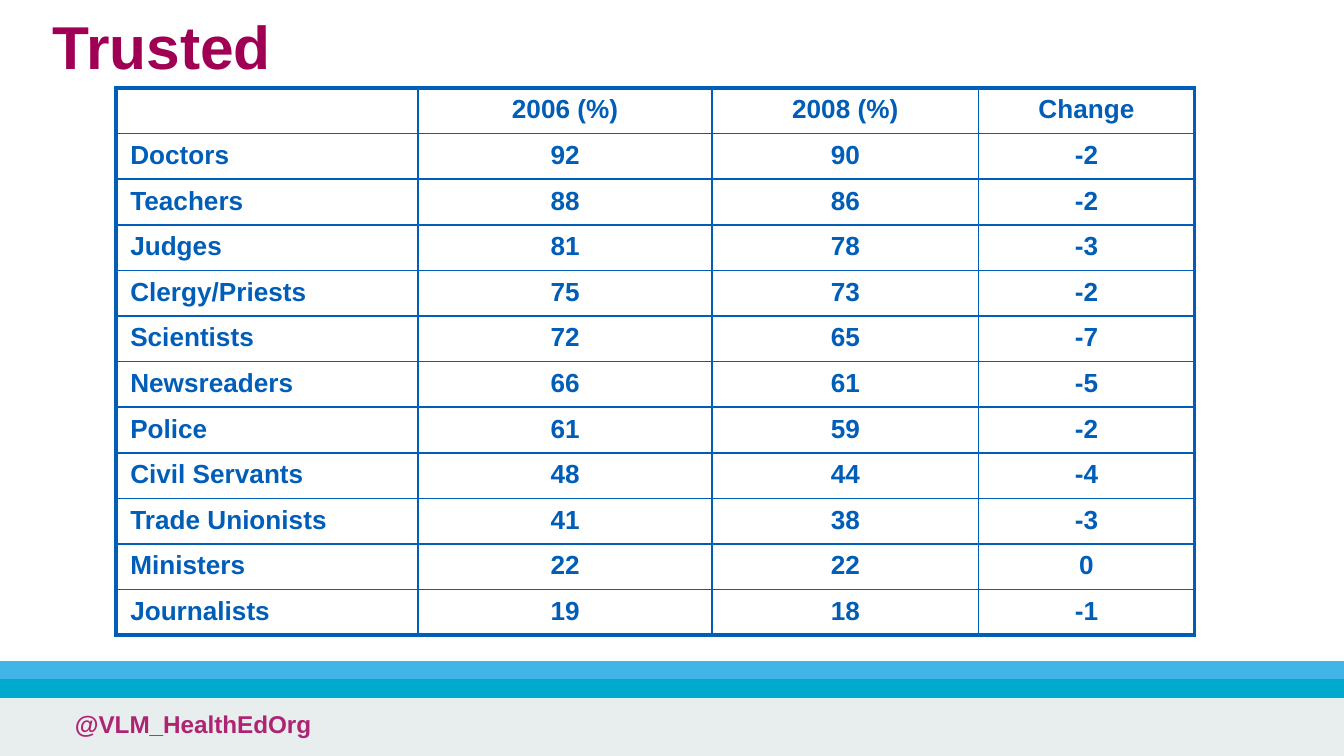
from lxml.etree import SubElement
from pptx import Presentation
from pptx.dml.color import RGBColor
from pptx.enum.shapes import MSO_SHAPE as Shape
from pptx.enum.text import MSO_ANCHOR as Anchor, PP_ALIGN as Align
from pptx.oxml.ns import qn
from pptx.util import Pt

HEADING = "Trusted"
HANDLE = "@VLM_HealthEdOrg"
HEADER = ("", "2006 (%)", "2008 (%)", "Change")
PROFESSIONS = [
    ("Doctors", "92", "90", "-2"),
    ("Teachers", "88", "86", "-2"),
    ("Judges", "81", "78", "-3"),
    ("Clergy/Priests", "75", "73", "-2"),
    ("Scientists", "72", "65", "-7"),
    ("Newsreaders", "66", "61", "-5"),
    ("Police", "61", "59", "-2"),
    ("Civil Servants", "48", "44", "-4"),
    ("Trade Unionists", "41", "38", "-3"),
    ("Ministers", "22", "22", "0"),
    ("Journalists", "19", "18", "-1"),
]
FOOTER_BANDS = [
    (374.4, 30.6, "E8EDEE"),
    (354.2, 10.1, "41B6E6"),
    (363.9, 10.1, "00A9CE"),
]
WIDTH, HEIGHT = 720, 405
COLUMN_WIDTHS = (161.8, 157.7, 142.6, 115.8)
ROW_HEIGHT = 23.84
BLUE = "005EB8"
THIN, THICK = 1, 2.25


def color(value):
    """Turn a hex string into a colour."""
    return RGBColor.from_string(value)


def style(paragraph, text, size, ink):
    """Write bold Arial text into a paragraph."""
    paragraph.text = text
    font = paragraph.font
    font.name, font.size, font.bold = "Arial", Pt(size), True
    font.color.rgb = color(ink)


def add_text(slide, text, box, size, ink):
    """Add a wrapping one-line text box and return its frame."""
    frame = slide.shapes.add_textbox(*map(Pt, box)).text_frame
    frame.word_wrap = True
    style(frame.paragraphs[0], text, size, ink)
    return frame


def add_border(cell, side, width):
    """Draw one blue side of a table cell."""
    line = SubElement(cell._tc.get_or_add_tcPr(), qn(f"a:ln{side}"), w=str(Pt(width)))
    fill = SubElement(line, qn("a:solidFill"))
    SubElement(fill, qn("a:srgbClr"), val=BLUE)


def add_trust_table(slide):
    """Add the trust table with a thick frame and thin inner rules."""
    rows = [HEADER, *PROFESSIONS]
    last_row, last_column = len(rows) - 1, len(HEADER) - 1
    table = slide.shapes.add_table(
        len(rows), len(HEADER), Pt(62.1), Pt(47.1),
        Pt(sum(COLUMN_WIDTHS)), Pt(ROW_HEIGHT * len(rows)),
    ).table
    table.first_row = table.horz_banding = False
    for column, width in zip(table.columns, COLUMN_WIDTHS):
        column.width = Pt(width)
    for r, row in enumerate(rows):
        table.rows[r].height = Pt(ROW_HEIGHT)
        for c, text in enumerate(row):
            cell = table.cell(r, c)
            cell.margin_left = cell.margin_right = Pt(7.7)
            cell.margin_top = cell.margin_bottom = Pt(3.8)
            paragraph = cell.text_frame.paragraphs[0]
            style(paragraph, text, 14, BLUE)
            paragraph.alignment = Align.CENTER if c else Align.LEFT
            outer = {"L": c == 0, "R": c == last_column, "T": r == 0, "B": r == last_row}
            for side, is_outer in outer.items():
                add_border(cell, side, THICK if is_outer else THIN)
            cell.fill.background()


def main():
    """Build the slide and save it."""
    deck = Presentation()
    deck.slide_width, deck.slide_height = Pt(WIDTH), Pt(HEIGHT)
    slide = deck.slides.add_slide(deck.slide_layouts[6])

    for top, height, fill in FOOTER_BANDS:
        band = slide.shapes.add_shape(Shape.RECTANGLE, 0, Pt(top), Pt(WIDTH), Pt(height))
        band.shadow.inherit = False
        band.fill.solid()
        band.fill.fore_color.rgb = color(fill)
        band.line.fill.background()

    add_text(slide, HANDLE, (33.1, 376.6, 420.5, 28.4), 13, "AE2473")
    heading = add_text(slide, HEADING, (28.1, 8, 620.6, 37.4), 32.4, "A00054")
    heading.margin_left = heading.margin_right = 0
    heading.margin_top = heading.margin_bottom = 0
    heading.vertical_anchor = Anchor.MIDDLE
    heading.paragraphs[0].line_spacing = 0.9
    add_trust_table(slide)
    deck.save("out.pptx")


if __name__ == "__main__":
    main()
